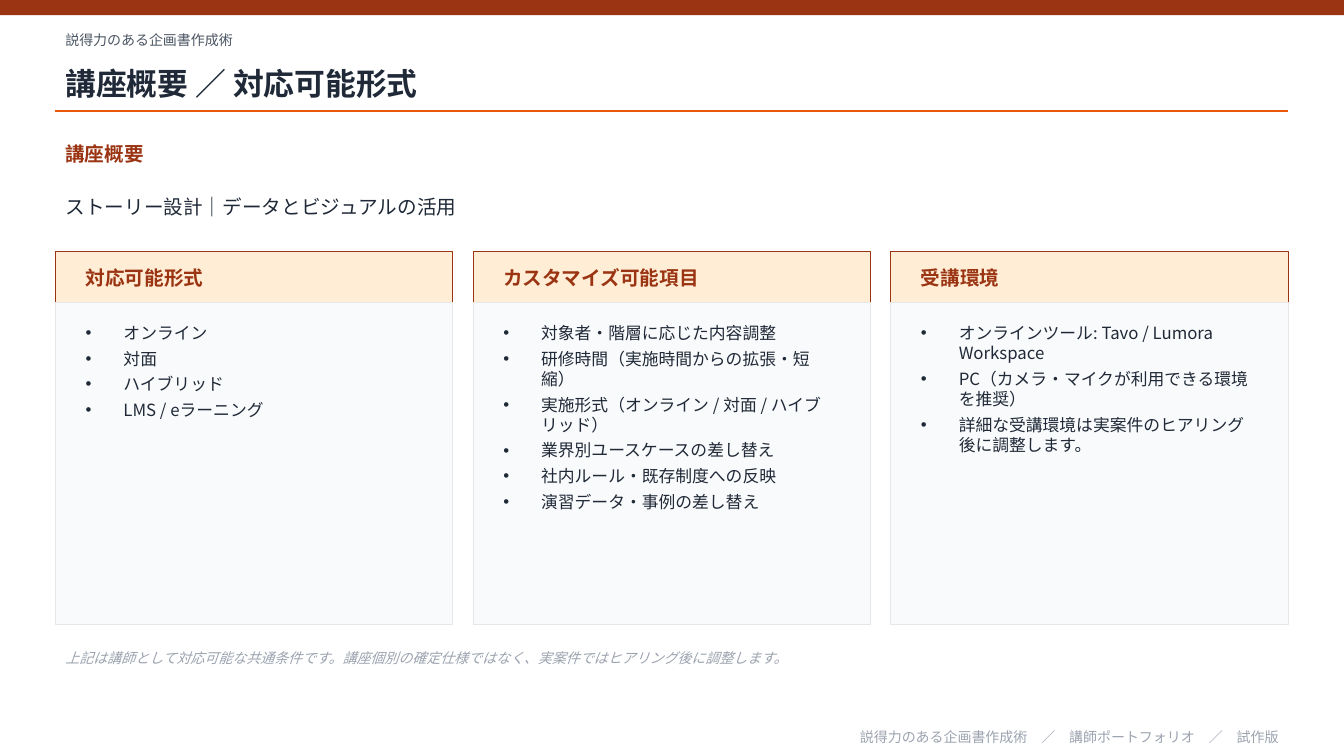
from lxml import etree
from pptx import Presentation
from pptx.dml.color import RGBColor
from pptx.enum.shapes import MSO_CONNECTOR, MSO_SHAPE
from pptx.enum.text import MSO_ANCHOR, MSO_AUTO_SIZE, PP_ALIGN
from pptx.oxml.ns import qn
from pptx.util import Pt

RECT, STRAIGHT = MSO_SHAPE.RECTANGLE, MSO_CONNECTOR.STRAIGHT
TOP, MIDDLE = MSO_ANCHOR.TOP, MSO_ANCHOR.MIDDLE
LEFT, RIGHT = PP_ALIGN.LEFT, PP_ALIGN.RIGHT
NO_AUTOFIT = MSO_AUTO_SIZE.NONE

THEME = {
    "font": "Noto Sans CJK JP",
    "colors": {"rust": "9A3412", "orange": "EA580C", "cream": "FFEDD5", "ink": "1F2937",
               "slate": "4B5563", "muted": "9CA3AF", "panel": "F9FAFB", "edge": "E5E7EB"},
    # Text styles: colour name, then font attributes
    "text": {
        "course": ("slate", {"size": Pt(10), "bold": False}),
        "title": ("ink", {"size": Pt(22), "bold": True}),
        "heading": ("rust", {"size": Pt(14), "bold": True}),
        "lead": ("ink", {"size": Pt(14), "bold": False}),
        "list": ("ink", {"size": Pt(12), "bold": False}),
        "note": ("muted", {"size": Pt(10), "italic": True}),
        "footer": ("muted", {"size": Pt(10)}),
    },
}
COLORS = {name: RGBColor.from_string(value) for name, value in THEME["colors"].items()}

MARGIN, CONTENT_W, GAP = 39.6, 880.56, 14.4
BULLET_INDENT = Pt(27)

prs = Presentation()
prs.slide_width, prs.slide_height = Pt(960), Pt(540)
slide = prs.slides.add_slide(prs.slide_layouts.get_by_name("Comparison"))
shapes = slide.shapes
title, *bodies = slide.placeholders
lead, *lists = bodies


def add_block(x, y, w, h, fill, line=None):
    block = shapes.add_shape(RECT, Pt(x), Pt(y), Pt(w), Pt(h))
    block.shadow.inherit = False
    block.fill.solid()
    block.fill.fore_color.rgb = COLORS[fill]
    if line:
        block.line.color.rgb = COLORS[line]
        block.line.width = Pt(0.75)
    else:
        block.line.fill.background()


def write(lines, style, x, y, w, h, holder=None, bullets=False, align=LEFT):
    if holder is None:
        holder = shapes.add_textbox(Pt(x), Pt(y), Pt(w), Pt(h))
    else:
        # Placeholders come first in the tree, so bring them in front of the panels
        shapes._spTree.append(holder._element)
        holder.left, holder.top, holder.width, holder.height = Pt(x), Pt(y), Pt(w), Pt(h)
    frame = holder.text_frame
    frame.auto_size, frame.word_wrap = NO_AUTOFIT, True
    frame.vertical_anchor = TOP if bullets else MIDDLE
    color, font_values = THEME["text"][style]
    for i, line in enumerate(lines):
        paragraph = frame.add_paragraph() if i else frame.paragraphs[0]
        props = paragraph._p.get_or_add_pPr()
        indent = BULLET_INDENT if bullets else 0
        props.set("marL", str(indent))
        props.set("indent", str(-indent))
        if bullets:
            etree.SubElement(props, qn("a:buChar")).set("char", "•")
        else:
            etree.SubElement(props, qn("a:buNone"))
        paragraph.alignment = align
        paragraph.space_before = Pt(0)
        paragraph.space_after = Pt(4 if bullets else 0)
        run = paragraph.add_run()
        run.text = line
        run.font.name = THEME["font"]
        run.font.color.rgb = COLORS[color]
        for name, value in font_values.items():
            setattr(run.font, name, value)
        etree.SubElement(run._r.get_or_add_rPr(), qn("a:ea")).set("typeface", THEME["font"])


# Top band and title
add_block(0, 0, 960, 10.8, "rust")
write(["説得力のある企画書作成術"], "course", MARGIN, 18, CONTENT_W, 21.6)
write(["講座概要 ／ 対応可能形式"], "title", MARGIN, 39.6, CONTENT_W, 39.6, title)
rule = shapes.add_connector(STRAIGHT, Pt(MARGIN), Pt(79.2), Pt(MARGIN + CONTENT_W), Pt(79.2))
rule.line.color.rgb = COLORS["orange"]
rule.line.width = Pt(1)
etree.SubElement(rule._element.spPr, qn("a:effectLst"))

# Course overview
write(["講座概要"], "heading", MARGIN, 97.2, CONTENT_W, 25.2)
write(["ストーリー設計｜データとビジュアルの活用"], "lead", MARGIN, 126, CONTENT_W, 43.2, lead)

# Three cards
CARDS = {
    "対応可能形式": ["オンライン", "対面", "ハイブリッド", "LMS / eラーニング"],
    "カスタマイズ可能項目": [
        "対象者・階層に応じた内容調整",
        "研修時間（実施時間からの拡張・短縮）",
        "実施形式（オンライン / 対面 / ハイブリッド）",
        "業界別ユースケースの差し替え",
        "社内ルール・既存制度への反映",
        "演習データ・事例の差し替え",
    ],
    "受講環境": [
        "オンラインツール: Tavo / Lumora Workspace",
        "PC（カメラ・マイクが利用できる環境を推奨）",
        "詳細な受講環境は実案件のヒアリング後に調整します。",
    ],
}
card_w = (CONTENT_W - GAP * (len(CARDS) - 1)) / len(CARDS)
for column, ((heading, items), holder) in enumerate(zip(CARDS.items(), lists)):
    x = MARGIN + column * (card_w + GAP)
    text_x, text_w = x + 14.4, card_w - 28.8
    add_block(x, 180, card_w, 36, "cream", "rust")
    write([heading], "heading", text_x, 180, text_w, 36)
    add_block(x, 216, card_w, 230.4, "panel", "edge")
    write(items, "list", text_x, 226.8, text_w, 205.2, holder, bullets=True)

# Note and footer
write(["上記は講師として対応可能な共通条件です。講座個別の確定仕様ではなく、実案件ではヒアリング後に調整します。"],
      "note", MARGIN, 457.2, CONTENT_W, 25.2)
write(["説得力のある企画書作成術　／　講師ポートフォリオ　／　試作版"],
      "footer", MARGIN, 518.4, CONTENT_W, 15.84, align=RIGHT)

prs.save("out.pptx")
